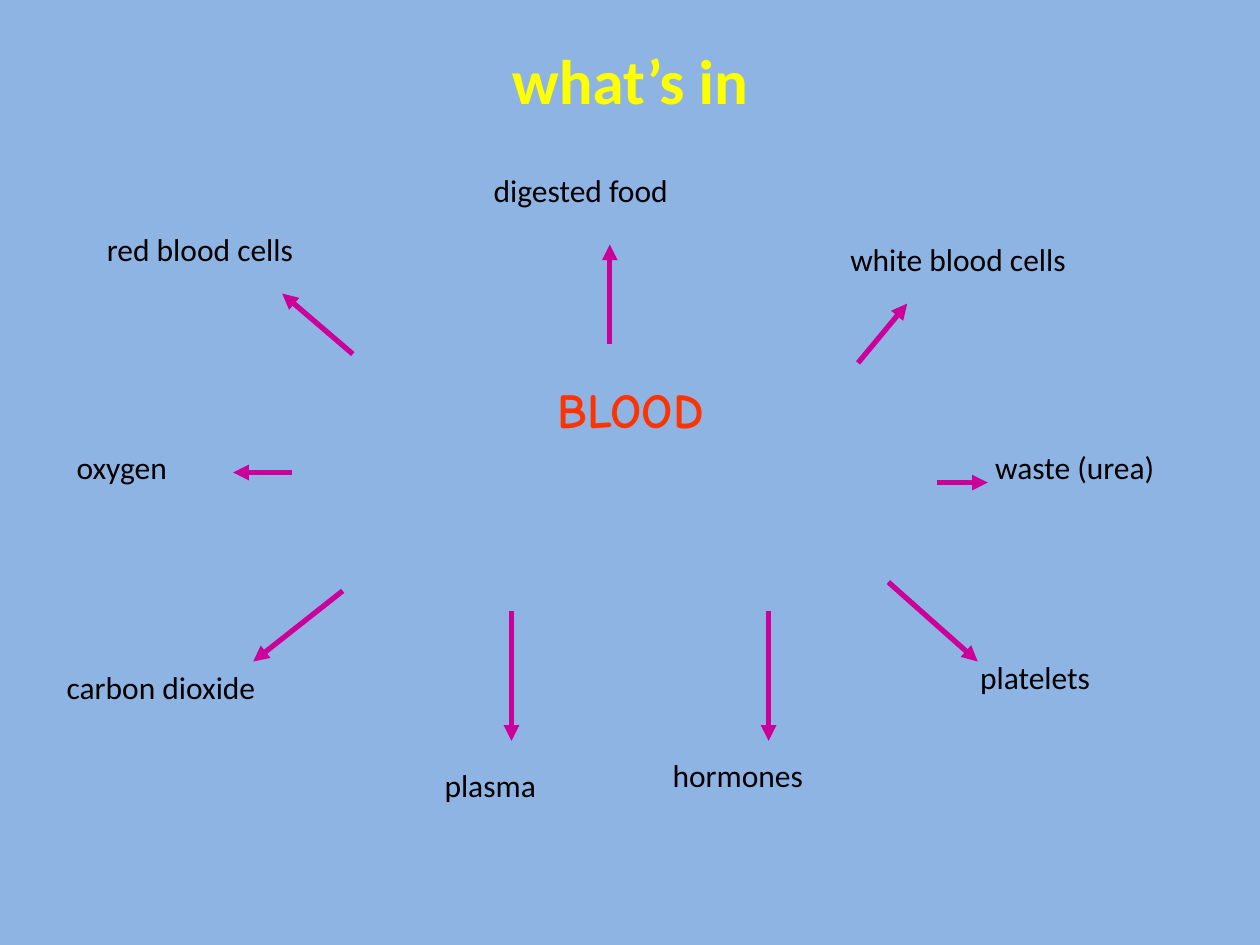
from lxml.etree import SubElement
from pptx import Presentation
from pptx.dml.color import RGBColor
from pptx.enum.shapes import MSO_CONNECTOR as Conn
from pptx.enum.text import PP_ALIGN as Align
from pptx.oxml.ns import qn
from pptx.util import Inches, Pt


def tint(code):
    return RGBColor.from_string(code)


class Deck:
    """Holds the style and the current slide."""
    font, size, ink = "Calibri", 18, "000000"
    back, rose, weight = "8EB4E3", "CC0099", 3

    def __init__(self):
        self.prs = Presentation()
        self.prs.slide_width, self.prs.slide_height = Inches(10), Inches(7.5)
        self.slide = self.prs.slides.add_slide(self.prs.slide_layouts[6])
        fill = self.slide.background.fill
        fill.solid()
        fill.fore_color.rgb = tint(self.back)

    def text(self, words, x, y, w, h=0.4, *, size=None, color=None,
             font=None, bold=False, align=Align.LEFT, wrap=True):
        box = self.slide.shapes.add_textbox(*map(Inches, (x, y, w, h)))
        frame = box.text_frame
        frame.word_wrap = wrap
        para = frame.paragraphs[0]
        para.alignment = align
        run = para.add_run()
        run.text = words
        run.font.name = font or self.font
        run.font.size = Pt(size or self.size)
        run.font.bold = bold
        run.font.color.rgb = tint(color or self.ink)

    def arrow(self, start, end):
        line = self.slide.shapes.add_connector(
            Conn.STRAIGHT, *map(Inches, (*start, *end)))
        line.line.color.rgb = tint(self.rose)
        line.line.width = Pt(self.weight)
        SubElement(line.line._get_or_add_ln(), qn("a:tailEnd"), type="triangle")
        SubElement(line._element.spPr, qn("a:effectLst"))


# Each part of blood: words, left, top, width, arrow start, arrow end
PARTS = [
    ("red blood cells", 0.75, 1.78, 2.52, (2.8, 2.81), (2.24, 2.33)),
    ("digested food", 3.82, 1.31, 2.36, (4.84, 2.73), (4.84, 1.94)),
    ("white blood cells", 6.65, 1.86, 2.84, (6.81, 2.88), (7.2, 2.41)),
    ("waste (urea)", 7.8, 3.51, 2.2, (7.44, 3.83), (7.84, 3.83)),
    ("platelets", 7.68, 5.17, 1.65, (7.05, 4.62), (7.76, 5.25)),
    ("hormones", 5.24, 5.95, 1.73, (6.1, 4.85), (6.1, 5.88)),
    ("plasma", 3.43, 6.03, 1.34, (4.06, 4.85), (4.06, 5.88)),
    ("carbon dioxide", 0.43, 5.25, 2.6, (2.72, 4.69), (2.01, 5.25)),
    ("oxygen", 0.51, 3.51, 1.34, (2.32, 3.75), (1.85, 3.75)),
]


def main():
    deck = Deck()
    deck.text("what’s in", 0, 0.28, 10, 0.7, size=36, color="FFFF00",
              bold=True, align=Align.CENTER)
    deck.text("BLOOD", 2.8, 2.96, 4.41, 1.67, size=28, color="FF3300",
              font="Comic Neue", bold=True, align=Align.CENTER, wrap=False)
    for words, x, y, w, start, end in PARTS:
        deck.text(words, x, y, w)
        deck.arrow(start, end)
    deck.prs.save("out.pptx")


if __name__ == "__main__":
    main()
